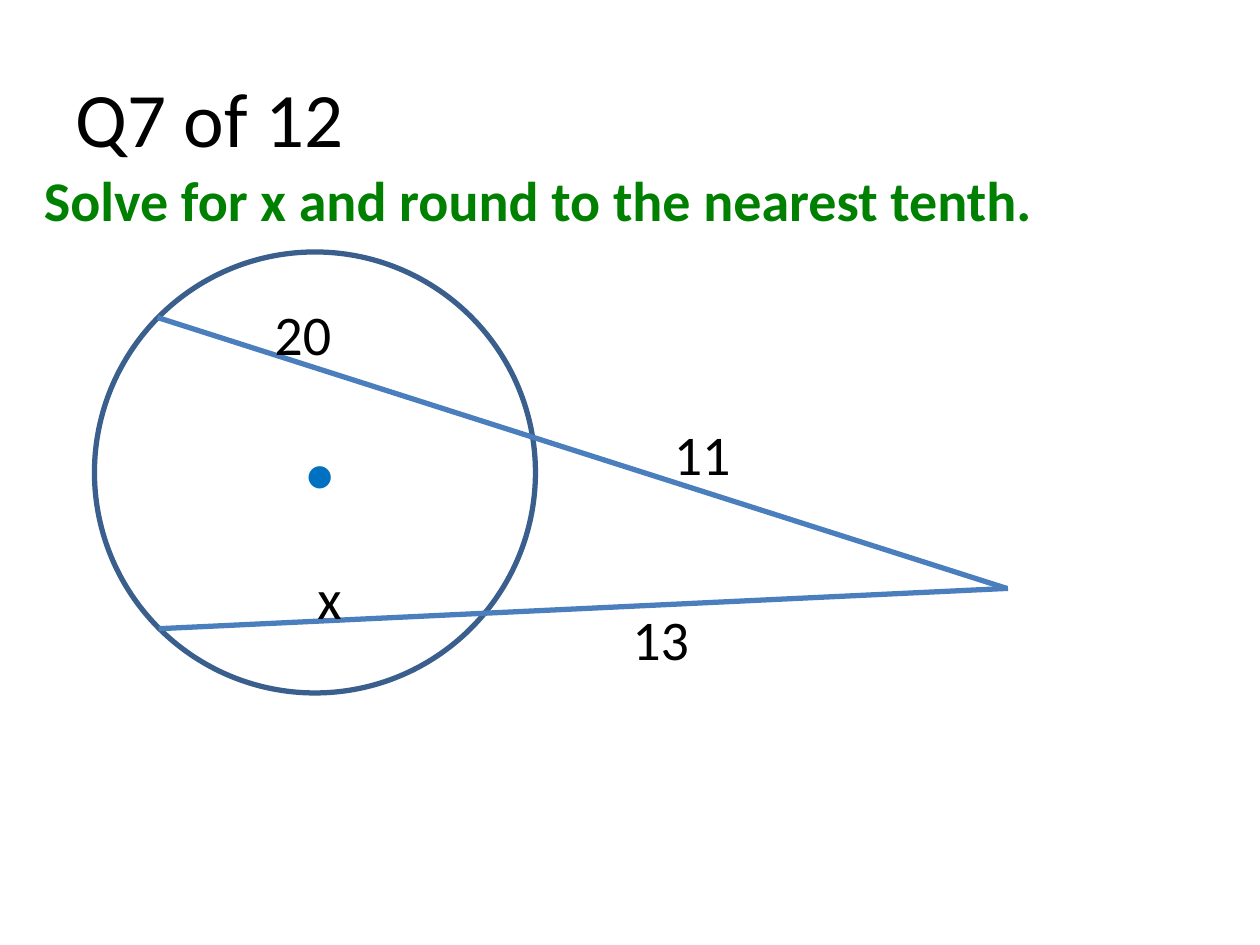
"""Build the geometry quiz slide with two secants drawn from a point outside a circle."""
from dataclasses import dataclass

import pptx
import pptx.dml.color
import pptx.enum.shapes
import pptx.enum.text
import pptx.oxml.xmlchemy
import pptx.shapes.connector
import pptx.slide
import pptx.text.text
import pptx.util
from lxml import etree
from pptx.dml.color import RGBColor
from pptx.util import Inches

BLACK = RGBColor(0x00, 0x00, 0x00)
GREEN = RGBColor(0x00, 0x80, 0x00)
CENTER_BLUE = RGBColor(0x00, 0x70, 0xC0)
CIRCLE_BLUE = RGBColor(0x3A, 0x5F, 0x8C)
SECANT_BLUE = RGBColor(0x4B, 0x7E, 0xBC)
FONT = "Calibri"
STROKE = pptx.util.Pt(3)
MIDDLE = pptx.enum.text.MSO_ANCHOR.MIDDLE
TOP = pptx.enum.text.MSO_ANCHOR.TOP


@dataclass(frozen=True)
class Label:
    text: str
    left: float
    top: float
    width: float
    height: float = 0.64
    size: int = 32
    color: RGBColor = BLACK
    bold: bool = False
    anchor: pptx.enum.text.MSO_ANCHOR = TOP
    wrap: bool = True


@dataclass(frozen=True)
class Secant:
    start: tuple[float, float]
    end: tuple[float, float]


INSTRUCTION = Label("Solve for x and round to the nearest tenth.", 0.25, 1.08, 9.33, 1,
                    color=GREEN, bold=True, anchor=MIDDLE)
CENTER = Label("•", 2.32, 3.38, 0.43, 0.71, size=36, color=CENTER_BLUE, wrap=False)
LENGTHS = [
    Label("11", 5.25, 3.28, 1.08),
    Label("13", 4.92, 4.75, 1.17),
    Label("20", 2.08, 2.33, 0.92),
    Label("x", 2.42, 4.42, 1.08),
]
LOWER_SECANT = Secant((1.26, 4.99), (8, 4.67))
UPPER_SECANT = Secant((1.25, 2.52), (7.99, 4.67))


def write(frame: pptx.text.text.TextFrame, text: str, size: int,
          color: RGBColor, bold: bool = False) -> None:
    frame.text = text
    paragraph = frame.paragraphs[0]
    paragraph.alignment = pptx.enum.text.PP_ALIGN.LEFT
    font = paragraph.runs[0].font
    font.name = FONT
    font.size = pptx.util.Pt(size)
    font.bold = bold
    font.color.rgb = color


def add_heading(slide: pptx.slide.Slide) -> None:
    heading = slide.shapes.title
    heading.left, heading.top = Inches(0.5), Inches(0.3)
    heading.width, heading.height = Inches(9), Inches(1.25)
    heading.text_frame.vertical_anchor = MIDDLE
    write(heading.text_frame, "Q7 of 12", 44, BLACK)


def add_label(slide: pptx.slide.Slide, label: Label) -> None:
    frame = slide.shapes.add_textbox(Inches(label.left), Inches(label.top),
                                     Inches(label.width), Inches(label.height)).text_frame
    frame.word_wrap = label.wrap
    frame.vertical_anchor = label.anchor
    if label.anchor == TOP:
        frame.auto_size = pptx.enum.text.MSO_AUTO_SIZE.SHAPE_TO_FIT_TEXT
    write(frame, label.text, label.size, label.color, label.bold)


def add_circle(slide: pptx.slide.Slide) -> None:
    circle = slide.shapes.add_shape(pptx.enum.shapes.MSO_SHAPE.OVAL, Inches(0.75),
                                    Inches(2), Inches(3.5), Inches(3.5))
    circle.shadow.inherit = False
    circle.fill.background()
    circle.line.color.rgb = CIRCLE_BLUE
    circle.line.width = STROKE


def add_secant(slide: pptx.slide.Slide, secant: Secant) -> None:
    line = slide.shapes.add_connector(pptx.enum.shapes.MSO_CONNECTOR.STRAIGHT,
                                      *map(Inches, secant.start + secant.end))
    line.line.color.rgb = SECANT_BLUE
    line.line.width = STROKE
    etree.SubElement(line._element.spPr, pptx.oxml.ns.qn("a:effectLst"))


def main() -> None:
    presentation = pptx.Presentation()
    presentation.slide_width, presentation.slide_height = Inches(10), Inches(7.5)
    slide = presentation.slides.add_slide(presentation.slide_layouts[5])
    add_heading(slide)
    add_label(slide, INSTRUCTION)
    add_circle(slide)
    add_secant(slide, LOWER_SECANT)
    add_label(slide, CENTER)
    add_secant(slide, UPPER_SECANT)
    for length in LENGTHS:
        add_label(slide, length)
    presentation.save("out.pptx")


if __name__ == "__main__":
    main()
